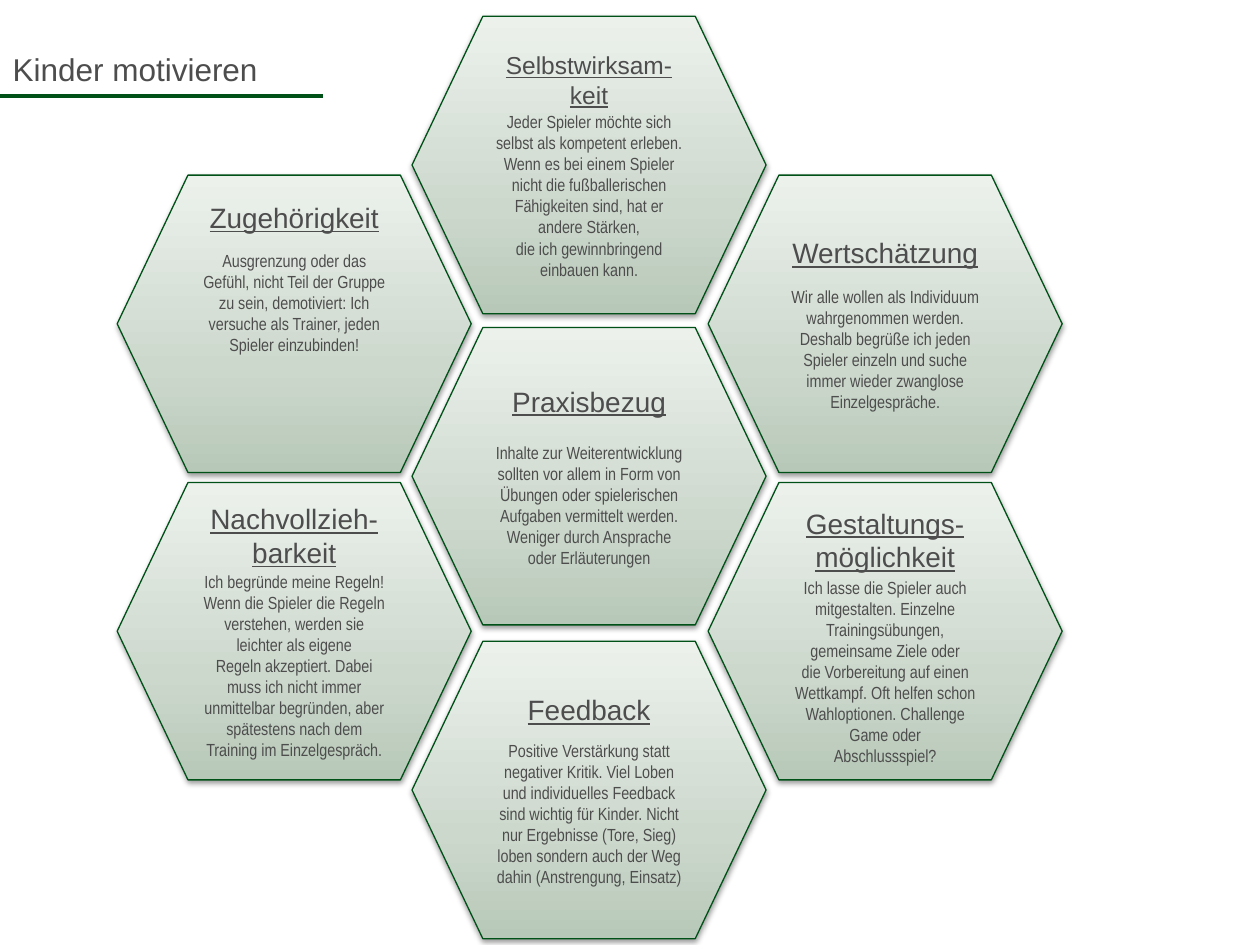
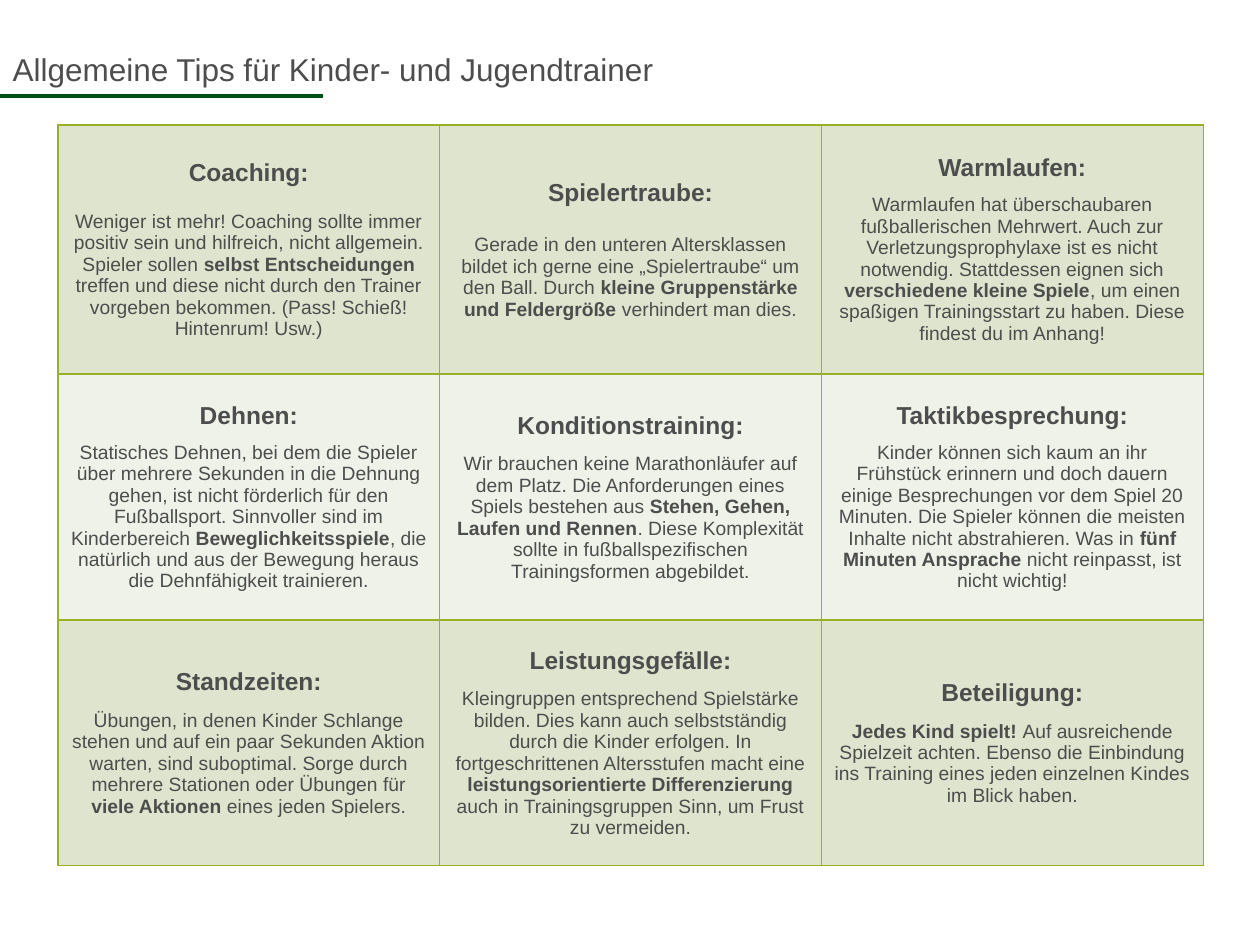
from dataclasses import dataclass

from lxml import etree
from pptx import Presentation
from pptx.dml.color import RGBColor
from pptx.enum.shapes import MSO_CONNECTOR, MSO_SHAPE
from pptx.enum.text import MSO_ANCHOR, PP_ALIGN
from pptx.oxml import parse_xml
from pptx.oxml.ns import nsdecls, qn
from pptx.util import Inches, Pt

# Shared look
DARK_GREEN = RGBColor(0x00, 0x51, 0x18)
TEXT_GREY = RGBColor(0x4D, 0x4D, 0x4D)
GRID_GREEN = RGBColor(0x99, 0xB1, 0x26)
BAND_DARK = RGBColor(0xDE, 0xE4, 0xCD)
BAND_LIGHT = RGBColor(0xEF, 0xF2, 0xE8)
SHADOW_BLACK = RGBColor(0x00, 0x00, 0x00)
GRADIENT = (
    (0, RGBColor(0xB7, 0xC8, 0xB8)),
    (35, RGBColor(0xCD, 0xD8, 0xCD)),
    (100, RGBColor(0xEC, 0xF1, 0xEC)),
)
FONT = "Arial"
NARROW_FONT = "Arial Narrow"

# Honeycomb layout in inches
HEX_WIDTH, HEX_HEIGHT = 2.81, 2.36
LEFT, MIDDLE, RIGHT = 0.93, 3.27, 5.62
SIDE_ROWS = (1.39, 3.83)
MIDDLE_ROWS = (0.13, 2.6, 5.09)


@dataclass
class Motive:
    left: float
    top: float
    heading: str
    body: list
    gap: float
    size: int = 16
    inset: float = 0.05
    anchor: MSO_ANCHOR = MSO_ANCHOR.MIDDLE


MOTIVES = [
    Motive(LEFT, SIDE_ROWS[0], "Zugehörigkeit",
           ["Ausgrenzung oder das Gefühl, nicht Teil der Gruppe zu sein, demotiviert: "
            "Ich versuche als Trainer, jeden Spieler einzubinden!"],
           gap=9.2, inset=0.2, anchor=MSO_ANCHOR.TOP),
    Motive(MIDDLE, MIDDLE_ROWS[1], "Praxisbezug",
           ["Inhalte zur Weiterentwicklung sollten vor allem in Form von Übungen oder "
            "spielerischen Aufgaben vermittelt werden. Weniger durch Ansprache oder "
            "Erläuterungen"],
           gap=14),
    Motive(RIGHT, SIDE_ROWS[1], "Gestaltungs-möglichkeit",
           ["Ich lasse die Spieler auch mitgestalten. Einzelne Trainingsübungen, "
            "gemeinsame Ziele oder",
            "die Vorbereitung auf einen Wettkampf. Oft helfen schon Wahloptionen. "
            "Challenge Game oder",
            "Abschlussspiel?"],
           gap=2.3, inset=0.13),
    Motive(LEFT, SIDE_ROWS[1], "Nachvollzieh-barkeit",
           ["Ich begründe meine Regeln! Wenn die Spieler die Regeln verstehen, werden "
            "sie leichter als eigene",
            "Regeln akzeptiert. Dabei muss ich nicht immer unmittelbar begründen, aber "
            "spätestens nach dem",
            "Training im Einzelgespräch."],
           gap=1.2),
    Motive(RIGHT, SIDE_ROWS[0], "Wertschätzung",
           ["Wir alle wollen als Individuum wahrgenommen werden. Deshalb begrüße ich "
            "jeden Spieler einzeln und suche immer wieder zwanglose Einzelgespräche."],
           gap=9.2),
    Motive(MIDDLE, MIDDLE_ROWS[0], "Selbstwirksam-keit",
           ["Jeder Spieler möchte sich selbst als kompetent erleben. Wenn es bei einem "
            "Spieler nicht die fußballerischen Fähigkeiten sind, hat er andere Stärken,",
            "die ich gewinnbringend einbauen kann."],
           gap=1.2, size=14),
    Motive(MIDDLE, MIDDLE_ROWS[2], "Feedback",
           ["Positive Verstärkung statt negativer Kritik. Viel Loben und individuelles "
            "Feedback sind wichtig für Kinder. Nicht nur Ergebnisse (Tore, Sieg) loben "
            "sondern auch der Weg dahin (Anstrengung, Einsatz)"],
           gap=8),
]

# Table cells: heading, gap below it in points, body paragraphs (** marks bold)
TIPS = [
    [
        ("Coaching:", 13.8,
         ["Weniger ist mehr! Coaching sollte immer positiv sein und hilfreich, nicht "
          "allgemein. Spieler sollen **selbst Entscheidungen **treffen und diese nicht "
          "durch den Trainer vorgeben bekommen. (Pass! Schieß! Hintenrum! Usw.)"]),
        ("Spielertraube:", 16,
         ["Gerade in den unteren Altersklassen bildet ich gerne eine „Spielertraube“ um "
          "den Ball. Durch **kleine Gruppenstärke und Feldergröße **verhindert man dies."]),
        ("Warmlaufen:", 7,
         ["Warmlaufen hat überschaubaren fußballerischen Mehrwert. Auch zur "
          "Verletzungsprophylaxe ist es nicht notwendig. Stattdessen eignen sich "
          "**verschiedene kleine Spiele**, um einen spaßigen Trainingsstart zu haben. "
          "Diese findest du im Anhang!"]),
    ],
    [
        ("Dehnen:", 7,
         ["Statisches Dehnen, bei dem die Spieler über mehrere Sekunden in die Dehnung "
          "gehen, ist nicht förderlich für den",
          "Fußballsport. Sinnvoller sind im Kinderbereich **Beweglichkeitsspiele**, die "
          "natürlich und aus der Bewegung heraus die Dehnfähigkeit trainieren."]),
        ("Konditionstraining:", 8,
         ["Wir brauchen keine Marathonläufer auf dem Platz. Die Anforderungen eines "
          "Spiels bestehen aus **Stehen, Gehen, Laufen und Rennen**. Diese Komplexität "
          "sollte in fußballspezifischen Trainingsformen abgebildet."]),
        ("Taktikbesprechung:", 7,
         ["Kinder können sich kaum an ihr Frühstück erinnern und doch dauern einige "
          "Besprechungen vor dem Spiel 20 Minuten. Die Spieler können die meisten "
          "Inhalte nicht abstrahieren. Was in **fünf Minuten Ansprache** nicht "
          "reinpasst, ist nicht wichtig!"]),
    ],
    [
        ("Standzeiten:", 8,
         ["Übungen, in denen Kinder Schlange stehen und auf ein paar Sekunden Aktion "
          "warten, sind suboptimal. Sorge durch mehrere Stationen oder Übungen für "
          "**viele Aktionen **eines jeden Spielers."]),
        ("Leistungsgefälle:", 8,
         ["Kleingruppen entsprechend Spielstärke bilden. Dies kann auch selbstständig "
          "durch die Kinder erfolgen. In fortgeschrittenen Altersstufen macht eine "
          "**leistungsorientierte Differenzierung **auch in Trainingsgruppen Sinn, um "
          "Frust zu vermeiden."]),
        ("Beteiligung:", 8,
         ["**Jedes Kind spielt! **Auf ausreichende Spielzeit achten. Ebenso die "
          "Einbindung ins Training eines jeden einzelnen Kindes im Blick haben."]),
    ],
]


def format_font(font, size, name=FONT):
    font.name = name
    font.size = Pt(size)
    font.color.rgb = TEXT_GREY


def add_page(deck, title, title_width):
    """Add a page with the shared title and the rule below it."""
    page = deck.slides.add_slide(deck.slide_layouts[5])
    box = page.shapes.title
    box.left, box.top = Inches(0), Inches(0.35)
    box.width, box.height = Inches(title_width), Inches(0.4)
    box.text_frame.text = title
    box.text_frame.vertical_anchor = MSO_ANCHOR.TOP
    para = box.text_frame.paragraphs[0]
    para.alignment = PP_ALIGN.LEFT
    format_font(para.font, 18)

    rule = page.shapes.add_connector(
        MSO_CONNECTOR.STRAIGHT, Inches(0), Inches(0.76), Inches(2.56), Inches(0.76))
    rule.line.color.rgb = DARK_GREEN
    rule.line.width = Pt(2.25)
    etree.SubElement(rule._element.spPr, qn("a:effectLst"))
    return page


def write_heading(frame, text, size, gap):
    para = frame.paragraphs[0]
    para.text = text
    para.alignment = PP_ALIGN.CENTER
    para.space_after = Pt(gap)
    format_font(para.font, size)
    return para


def write_body(frame, texts, size, name=FONT):
    for text in texts:
        para = frame.add_paragraph()
        para.alignment = PP_ALIGN.CENTER
        format_font(para.font, size, name)
        for index, part in enumerate(text.split("**")):
            if part:
                span = para.add_run()
                span.text = part
                if "**" in text:
                    span.font.bold = index % 2 == 1


def shade_hexagon(hexagon):
    """Give a hexagon its upward gradient and soft shadow."""
    stops = "".join(
        f'<a:gs pos="{position * 1000}"><a:srgbClr val="{colour}"/></a:gs>'
        for position, colour in GRADIENT)
    properties = hexagon._element.spPr
    properties.find(qn("a:prstGeom")).addnext(parse_xml(
        f'<a:gradFill {nsdecls("a")} rotWithShape="1"><a:gsLst>{stops}</a:gsLst>'
        '<a:lin ang="16200000" scaled="0"/></a:gradFill>'))
    hexagon.shadow.inherit = False
    properties.find(qn("a:effectLst")).append(parse_xml(
        f'<a:outerShdw {nsdecls("a")} blurRad="40000" dist="20000" dir="5400000" '
        f'rotWithShape="0"><a:srgbClr val="{SHADOW_BLACK}"><a:alpha val="38000"/>'
        '</a:srgbClr></a:outerShdw>'))


def add_hexagon(page, motive):
    hexagon = page.shapes.add_shape(
        MSO_SHAPE.FLOWCHART_PREPARATION, Inches(motive.left), Inches(motive.top),
        Inches(HEX_WIDTH), Inches(HEX_HEIGHT))
    hexagon.line.color.rgb = DARK_GREEN
    hexagon.line.width = Pt(0.75)
    shade_hexagon(hexagon)
    frame = hexagon.text_frame
    frame.word_wrap = True
    frame.vertical_anchor = motive.anchor
    frame.margin_top = Inches(motive.inset)
    heading = write_heading(frame, motive.heading, motive.size, motive.gap)
    heading.font.underline = True
    write_body(frame, motive.body, 10, NARROW_FONT)


def set_borders(cell):
    properties = cell._tc.get_or_add_tcPr()
    for index, side in enumerate(("lnL", "lnR", "lnT", "lnB")):
        properties.insert(index, parse_xml(
            f'<a:{side} {nsdecls("a")} w="12700"><a:solidFill>'
            f'<a:srgbClr val="{GRID_GREEN}"/></a:solidFill></a:{side}>'))


def add_tip_table(page, rows):
    frame = page.shapes.add_table(
        len(rows), len(rows[0]), Inches(0.46), Inches(0.99), Inches(9.09), Inches(5.88))
    table = frame.table
    table.first_row = table.horz_banding = False
    for row, height in zip(table.rows, (1.98, 1.95, 1.95)):
        row.height = Inches(height)
    for row_index, tips in enumerate(rows):
        for column_index, (heading, gap, body) in enumerate(tips):
            cell = table.cell(row_index, column_index)
            cell.fill.solid()
            cell.fill.fore_color.rgb = BAND_LIGHT if row_index % 2 else BAND_DARK
            cell.vertical_anchor = MSO_ANCHOR.MIDDLE
            set_borders(cell)
            write_heading(cell.text_frame, heading, 14, gap).font.bold = True
            write_body(cell.text_frame, body, 11)


def main():
    deck = Presentation()
    deck.slide_width, deck.slide_height = Inches(10), Inches(7.5)

    # Honeycomb of motives
    page = add_page(deck, "Kinder motivieren", 2.72)
    for motive in MOTIVES:
        add_hexagon(page, motive)

    # Table of tips
    page = add_page(deck, "Allgemeine Tips für Kinder- und Jugendtrainer", 7.6)
    add_tip_table(page, TIPS)

    deck.save("out.pptx")


if __name__ == "__main__":
    main()
